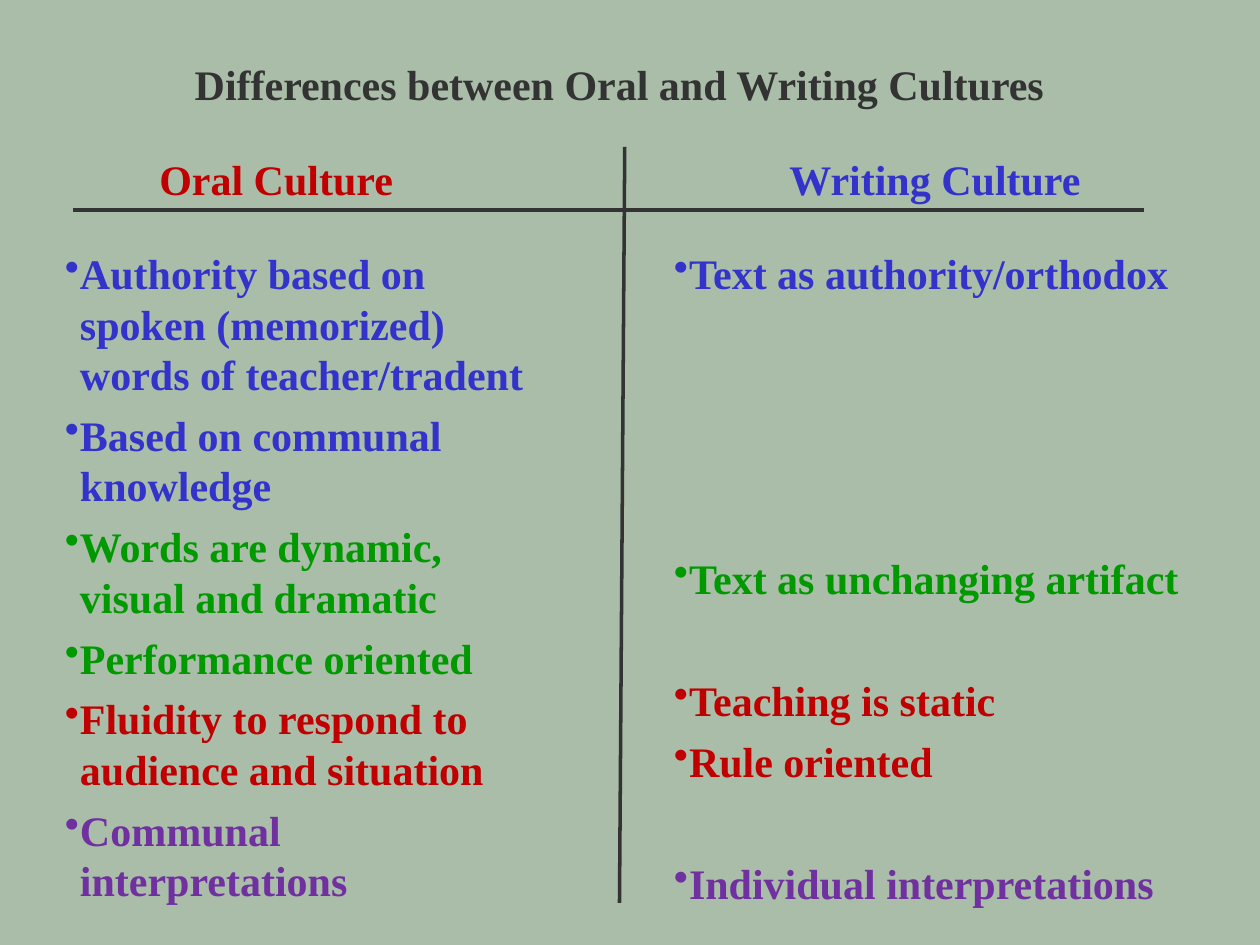
import pptx
import pptx.dml.color
import pptx.enum.shapes
import pptx.enum.text
import pptx.oxml.ns
import pptx.util
from lxml import etree

Pt = pptx.util.Pt
qn = pptx.oxml.ns.qn
RGB = pptx.dml.color.RGBColor.from_string

THEME = {
    "background": RGB("A9BDA9"),
    "dark": RGB("333333"),
    "red": RGB("C00000"),
    "blue": RGB("3333CC"),
    "green": RGB("009900"),
    "purple": RGB("7030A0"),
    "font": {"name": "Times New Roman", "size": Pt(24), "bold": True},
    "line_width": Pt(2),
}
ROW_GAP = 34.86  # one empty line of text with its spacing
HANGING = Pt(8.64)


def add_text_box(slide, left, top, width, height):
    shape = slide.shapes.add_textbox(Pt(left), Pt(top), Pt(width), Pt(height))
    shape.text_frame.word_wrap = True
    shape.text_frame.auto_size = pptx.enum.text.MSO_AUTO_SIZE.SHAPE_TO_FIT_TEXT
    return shape.text_frame


def add_run(paragraph, text, color):
    run = paragraph.add_run()
    run.text = text
    for name, value in THEME["font"].items():
        setattr(run.font, name, value)
    run.font.color.rgb = THEME[color]


presentation = pptx.Presentation()
presentation.slide_width, presentation.slide_height = Pt(720), Pt(540)
slide = presentation.slides.add_slide(presentation.slide_layouts[6])
slide.background.fill.solid()
slide.background.fill.fore_color.rgb = THEME["background"]

# Title
paragraph = add_text_box(slide, 24, 30, 660, 36.6).paragraphs[0]
paragraph.alignment = pptx.enum.text.PP_ALIGN.CENTER
add_run(paragraph, "Differences between Oral and Writing Cultures", "dark")

# Column headings on two tab stops
paragraph = add_text_box(slide, 12, 84, 690, 36.6).paragraphs[0]
tab_list = etree.SubElement(paragraph._p.get_or_add_pPr(), qn("a:tabLst"))
for position in (72, 432):
    etree.SubElement(tab_list, qn("a:tab"), pos=str(Pt(position)), algn="l")
add_run(paragraph, "\tOral Culture", "red")
add_run(paragraph, "\tWriting Culture", "blue")

# Dividing lines
for start_x, start_y, end_x, end_y in ((357, 84, 354, 516), (42, 120, 654, 120)):
    connector = slide.shapes.add_connector(
        pptx.enum.shapes.MSO_CONNECTOR.STRAIGHT,
        Pt(start_x), Pt(start_y), Pt(end_x), Pt(end_y))
    connector.line.color.rgb = THEME["dark"]
    connector.line.width = THEME["line_width"]
    etree.SubElement(connector._element.spPr, qn("a:effectLst"))

# Bulleted columns: text, colour, empty rows above
columns = (
    ((30, 138, 294, 386.6), (
        ("Authority based on spoken (memorized) words of teacher/tradent", "blue", 0),
        ("Based on communal knowledge", "blue", 0),
        ("Words are dynamic, visual and dramatic", "green", 0),
        ("Performance oriented", "green", 0),
        ("Fluidity to respond to audience and situation", "red", 0),
        ("Communal interpretations", "purple", 0),
    )),
    ((378, 138, 312, 388), (
        ("Text as authority/orthodox", "blue", 0),
        ("Text as unchanging artifact", "green", 4),
        ("Teaching is static", "red", 1),
        ("Rule oriented", "red", 0),
        ("Individual interpretations", "purple", 1),
    )),
)
for box, points in columns:
    text_frame = add_text_box(slide, *box)
    for index, (text, color, empty_rows) in enumerate(points):
        paragraph = text_frame.add_paragraph() if index else text_frame.paragraphs[0]
        properties = paragraph._p.get_or_add_pPr()
        properties.set("marL", str(HANGING))
        properties.set("indent", str(-HANGING))
        etree.SubElement(properties, qn("a:buChar"), char="•")
        spacing = {"space_before": Pt(empty_rows * ROW_GAP), "space_after": Pt(6)}
        for name, value in spacing.items():
            setattr(paragraph, name, value)
        add_run(paragraph, text, color)

presentation.save("out.pptx")
